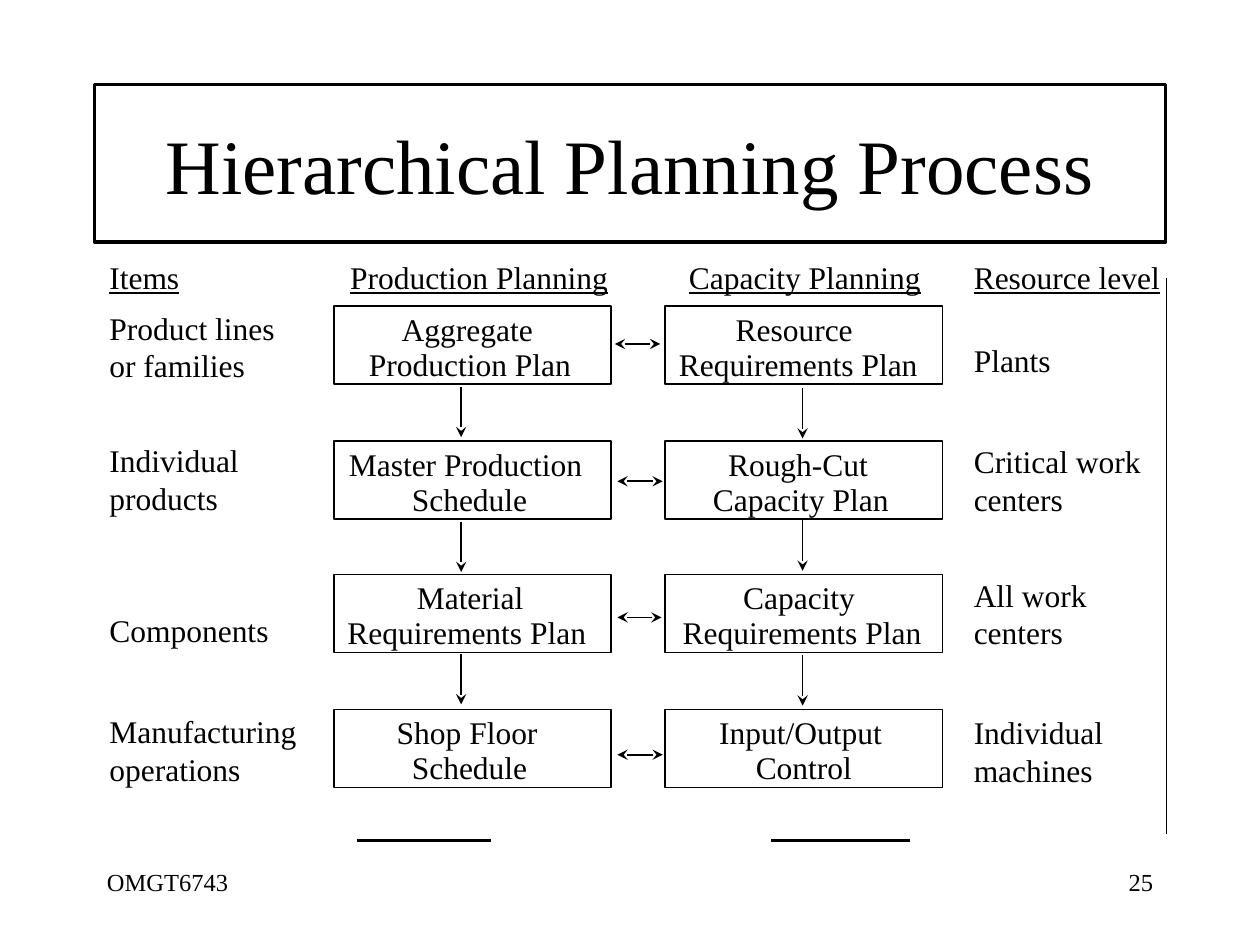
from dataclasses import dataclass

from lxml.etree import SubElement
from pptx import Presentation
from pptx.dml.color import RGBColor
from pptx.enum.shapes import MSO_CONNECTOR as Connector, MSO_SHAPE as Shape
from pptx.enum.text import MSO_ANCHOR as Anchor, MSO_AUTO_SIZE as AutoSize
from pptx.enum.text import PP_ALIGN as Align
from pptx.oxml.ns import qn
from pptx.util import Pt

EMU_PER_PX = 9144
FONT = "Times New Roman"
COLORS = {"ink": "000000"}

ROW_TOP, ROW_PITCH = 243, 320 / 3
BOX_WIDTH, BOX_HEIGHT = 220, 62
LINE_OFFSETS = (-2, 26)
ONE_LINE, TWO_LINES = 40, 70


@dataclass(frozen=True)
class Label:
    text: str
    left: int
    top: int
    width: int
    height: int = ONE_LINE
    size: int = 18
    wrap: bool = True
    underline: bool = False
    align: Align = Align.LEFT
    anchor: Anchor = Anchor.TOP


@dataclass(frozen=True)
class TextLine:
    text: str
    left: int
    width: int


@dataclass(frozen=True)
class PlanColumn:
    left: int
    plans: tuple[tuple[TextLine, TextLine], ...]


@dataclass(frozen=True)
class Line:
    start: tuple[int, int]
    end: tuple[int, int]
    weight: float = 1
    ends: tuple[str, ...] = ()


TITLE = Label("Hierarchical Planning Process", 75, 67, 850, 125, size=44,
              align=Align.CENTER, anchor=Anchor.MIDDLE)

FOOTERS = (
    Label("25", 717, 683, 208, 50, size=14, align=Align.RIGHT),
    Label("OMGT6743", 75, 683, 208, 50, size=14),
)

HEADINGS = (
    TextLine("Items", 77, 76),
    TextLine("Production Planning", 268, 225),
    TextLine("Capacity Planning", 537, 204),
    TextLine("Resource level", 763, 168),
)

SIDE_LABELS = (
    Label("Product lines or families", 77, 240, 175, TWO_LINES),
    Label("Individual products", 77, 345, 175, TWO_LINES),
    Label("Components", 77, 480, 175),
    Label("Manufacturing operations", 77, 560, 175, TWO_LINES),
    Label("Plants", 763, 266, 175),
    Label("Critical work centers", 763, 346, 175, TWO_LINES),
    Label("All work centers", 763, 452, 175, TWO_LINES),
    Label("Individual machines", 763, 561, 175, TWO_LINES),
)

PLAN_COLUMNS = (
    PlanColumn(265, (
        (TextLine("Aggregate", 309, 130), TextLine("Production Plan", 283, 181)),
        (TextLine("Master Production", 267, 211), TextLine("Schedule", 317, 112)),
        (TextLine("Material", 321, 111), TextLine("Requirements Plan", 266, 210)),
        (TextLine("Shop Floor", 305, 138), TextLine("Schedule", 317, 112)),
    )),
    PlanColumn(528, (
        (TextLine("Resource", 574, 119), TextLine("Requirements Plan", 529, 210)),
        (TextLine("Rough-Cut", 568, 137), TextLine("Capacity Plan", 556, 160)),
        (TextLine("Capacity", 580, 115), TextLine("Requirements Plan", 532, 210)),
        (TextLine("Input/Output", 561, 155), TextLine("Control", 590, 97)),
    )),
)

FRAME_LINES = (
    Line((926, 221), (926, 662), 0.75),
    Line((283, 667), (390, 667), 2),
    Line((612, 667), (722, 667), 2),
)

EXCHANGES = ((488, 524, 273), (490, 526, 382), (490, 525, 490), (490, 526, 599))
DESCENTS = ((366, (307, 414, 519)), (637, (308, 413, 520)))
DESCENT_LENGTH = 40


def px(length: int) -> int:
    return length * EMU_PER_PX


def color(name: str) -> RGBColor:
    return RGBColor.from_string(COLORS[name])


def add_label(page, label: Label) -> None:
    box = page.shapes.add_textbox(
        px(label.left), px(label.top), px(label.width), px(label.height))
    frame = box.text_frame
    frame.text = label.text
    frame.word_wrap = label.wrap
    if not label.wrap:
        frame.auto_size = AutoSize.SHAPE_TO_FIT_TEXT
    frame.vertical_anchor = label.anchor
    para = frame.paragraphs[0]
    para.alignment = label.align
    for span in para.runs:
        span.font.name = FONT
        span.font.size = Pt(label.size)
        span.font.color.rgb = color("ink")
        if label.underline:
            span.font.underline = True


def add_outline(page, left: int, top: int, width: int, height: int,
                weight: float) -> None:
    box = page.shapes.add_shape(
        Shape.RECTANGLE, px(left), px(top), px(width), px(height))
    box.shadow.inherit = False
    box.fill.background()
    box.line.color.rgb = color("ink")
    box.line.width = Pt(weight)


def add_line(page, line: Line) -> None:
    connector = page.shapes.add_connector(
        Connector.STRAIGHT, *map(px, line.start + line.end))
    connector.line.color.rgb = color("ink")
    connector.line.width = Pt(line.weight)
    outline = connector.line._get_or_add_ln()
    for end in line.ends:
        SubElement(outline, qn(f"a:{end}"), type="stealth")
    SubElement(connector._element.spPr, qn("a:effectLst"))


def add_plan_column(page, column: PlanColumn) -> None:
    for row, plan in enumerate(column.plans):
        top = round(ROW_TOP + row * ROW_PITCH)
        add_outline(page, column.left, top, BOX_WIDTH, BOX_HEIGHT, 1)
        for line, offset in zip(plan, LINE_OFFSETS):
            add_label(page, Label(line.text, line.left, top + offset,
                                  line.width, wrap=False))


def main() -> None:
    deck = Presentation()
    deck.slide_width, deck.slide_height = px(1000), px(750)
    page = deck.slides.add_slide(deck.slide_layouts[6])

    add_outline(page, TITLE.left, TITLE.top, TITLE.width, TITLE.height, 2)
    for line in FRAME_LINES:
        add_line(page, line)
    for label in (*FOOTERS, TITLE, *SIDE_LABELS):
        add_label(page, label)
    for heading in HEADINGS:
        add_label(page, Label(heading.text, heading.left, 200, heading.width,
                              wrap=False, underline=True))
    for column in PLAN_COLUMNS:
        add_plan_column(page, column)
    for left, right, y in EXCHANGES:
        add_line(page, Line((left, y), (right, y), ends=("headEnd", "tailEnd")))
    for x, tops in DESCENTS:
        for top in tops:
            add_line(page, Line((x, top), (x, top + DESCENT_LENGTH),
                                ends=("tailEnd",)))

    deck.save("out.pptx")


if __name__ == "__main__":
    main()
